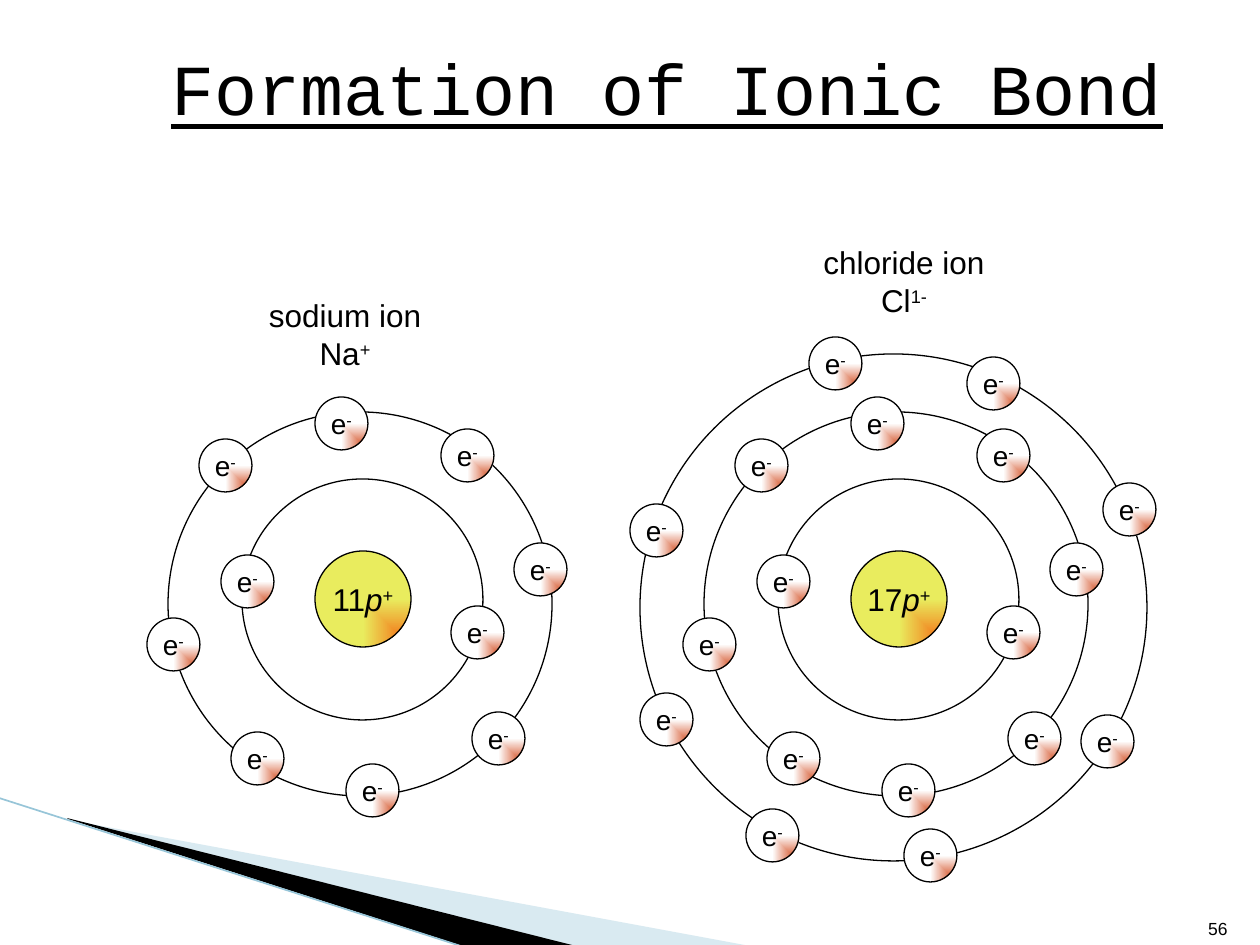
from dataclasses import dataclass

from lxml.etree import SubElement
from pptx import Presentation
from pptx.dml.color import RGBColor as Rgb
from pptx.enum.shapes import MSO_CONNECTOR as Connector, MSO_SHAPE as Preset
from pptx.enum.text import MSO_ANCHOR as Anchor, MSO_AUTO_SIZE as AutoSize, PP_ALIGN as Align
from pptx.oxml.ns import qn
from pptx.util import Pt

EMU_PER_PX = 914400 / 126


@dataclass(frozen=True)
class Theme:
    ink: str = "000000"
    swoosh: str = "A0CBDC"
    swoosh_edge: str = "97C5D8"
    nucleus: tuple = ("F55F0B", "E9EC5E")
    electron: tuple = ("CC3300", "FFFFFF")
    body_font: str = "Arial"
    title_font: str = "Courier New"
    title_size: int = 41
    label_size: int = 18
    electron_size: int = 16
    number_size: int = 10
    outline: float = 0.75
    edge_width: float = 0.95


THEME = Theme()

ELECTRON = 53
NUCLEUS = (168, 154, 96)
SHELLS = [
    ((95, 82, 241), [(74, 158), (304, 209)]),
    ((21, 15, 384), [(168, 0), (294, 32), (52, 42), (0, 221),
                     (84, 335), (199, 367), (325, 315), (367, 146)]),
    ((-43, -43, 507), [(398, 318), (221, 432), (-43, 296), (-53, 107),
                       (126, -60), (284, -40), (63, 412), (420, 86)]),
]


def px(length):
    return round(length * EMU_PER_PX)


def style_run(run, size, font=THEME.body_font):
    run.font.size = Pt(size)
    run.font.name = font
    run.font.color.rgb = Rgb.from_string(THEME.ink)


def write_symbol(paragraph, parts, size):
    paragraph.alignment = Align.CENTER
    for wording, role in parts:
        run = paragraph.add_run()
        run.text = wording
        style_run(run, size)
        if role == "super":
            run.font._element.set("baseline", "30000")
        elif role == "italic":
            run.font.italic = True


def shade_corner(fill, colours):
    fill.gradient()
    for stop, colour in zip(fill.gradient_stops, colours):
        stop.color.rgb = Rgb.from_string(colour)
    gradient = fill._xPr.find(qn("a:gradFill"))
    gradient.remove(gradient.find(qn("a:lin")))
    focus = SubElement(gradient, qn("a:path"), path="rect")
    SubElement(focus, qn("a:fillToRect"), l="100000", t="100000")


def add_circle(shapes, left, top, size, colours=None, symbol=(), text_size=None):
    circle = shapes.add_shape(Preset.OVAL, px(left), px(top), px(size), px(size))
    circle.shadow.inherit = False
    circle.line.color.rgb = Rgb.from_string(THEME.ink)
    circle.line.width = Pt(THEME.outline)
    if colours:
        shade_corner(circle.fill, colours)
    else:
        circle.fill.background()
    if symbol:
        frame = circle.text_frame
        frame.word_wrap = False
        frame.vertical_anchor = Anchor.MIDDLE
        write_symbol(frame.paragraphs[0], symbol, text_size)


def add_ion(shapes, left, top, protons, shell_count):
    for number, ((x, y, size), electrons) in enumerate(SHELLS[:shell_count]):
        add_circle(shapes, left + x, top + y, size)
        if number == 0:
            x, y, size = NUCLEUS
            add_circle(shapes, left + x, top + y, size, THEME.nucleus,
                       [(protons, ""), ("p", "italic"), ("+", "super")], THEME.label_size)
        for x, y in electrons:
            add_circle(shapes, left + x, top + y, ELECTRON, THEME.electron,
                       [("e", ""), ("-", "super")], THEME.electron_size)


def add_ion_label(shapes, left, top, width, height, ion, element, charge):
    frame = shapes.add_textbox(px(left), px(top), px(width), px(height)).text_frame
    frame.word_wrap = False
    frame.auto_size = AutoSize.SHAPE_TO_FIT_TEXT
    write_symbol(frame.paragraphs[0], [(ion, "")], THEME.label_size)
    write_symbol(frame.add_paragraph(), [(element, ""), (charge, "super")], THEME.label_size)


def add_line_of_text(shapes, box, wording, size, font, align, anchor):
    frame = shapes.add_textbox(*map(px, box)).text_frame
    frame.word_wrap = True
    frame.vertical_anchor = anchor
    frame.text = wording
    paragraph = frame.paragraphs[0]
    paragraph.alignment = align
    run = paragraph.runs[0]
    style_run(run, size, font)
    return run


def add_wedge(shapes, left, top, corners, colour):
    points = [(px(left + x), px(top + y)) for x, y in corners]
    builder = shapes.build_freeform(*points[0], scale=1.0)
    builder.add_line_segments(points[1:], close=True)
    wedge = builder.convert_to_shape()
    wedge.shadow.inherit = False
    wedge.line.fill.background()
    wedge.fill.solid()
    wedge.fill.fore_color.rgb = Rgb.from_string(colour)
    return wedge


def add_corner_swoosh(shapes, left, top):
    pale = add_wedge(shapes, left, top, [(70, 22), (751, 148), (576, 148), (70, 21)], THEME.swoosh)
    colour = pale.fill._xPr.find(qn("a:solidFill"))[0]
    SubElement(colour, qn("a:alpha"), val="40000")
    add_wedge(shapes, left, top, [(68, 20), (577, 148), (470, 150), (69, 21)], THEME.ink)
    edge = shapes.add_connector(Connector.STRAIGHT, px(left), px(top), px(left + 468), px(top + 150))
    edge.line.color.rgb = Rgb.from_string(THEME.swoosh_edge)
    edge.line.width = Pt(THEME.edge_width)
    SubElement(edge._element.spPr, qn("a:effectLst"))


def build_slide(slide):
    shapes = slide.shapes
    add_corner_swoosh(shapes, -1, 798)
    add_line_of_text(shapes, (1124, 883, 116, 62), "56", THEME.number_size,
                     THEME.body_font, Align.RIGHT, Anchor.BOTTOM)
    title = add_line_of_text(shapes, (74, 32, 1186, 110), "Formation of Ionic Bond",
                             THEME.title_size, THEME.title_font, Align.CENTER, Anchor.MIDDLE)
    title.font.underline = True

    add_ion_label(shapes, 811, 237, 186, 88, "chloride ion", "Cl", "1-")
    sodium = shapes.add_group_shape().shapes
    add_ion_label(sodium, 256, 290, 178, 88, "sodium ion", "Na", "+")
    add_ion(sodium, 147, 397, "11", 2)
    chloride = shapes.add_group_shape().shapes
    add_ion(chloride, 683, 397, "17", 3)


def main():
    deck = Presentation()
    deck.slide_width = px(1260)
    deck.slide_height = px(945)
    build_slide(deck.slides.add_slide(deck.slide_layouts[6]))
    deck.save("out.pptx")


if __name__ == "__main__":
    main()
